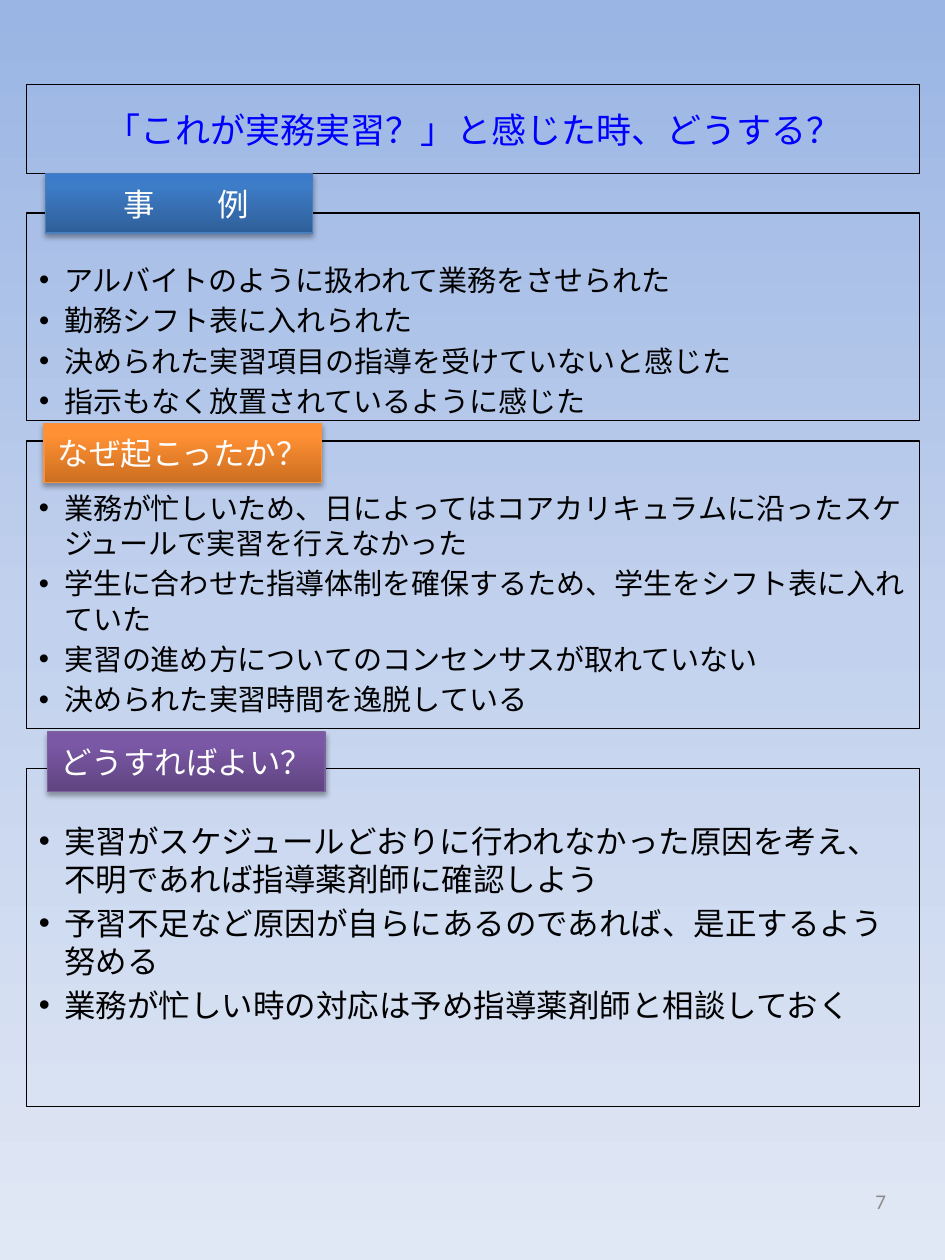
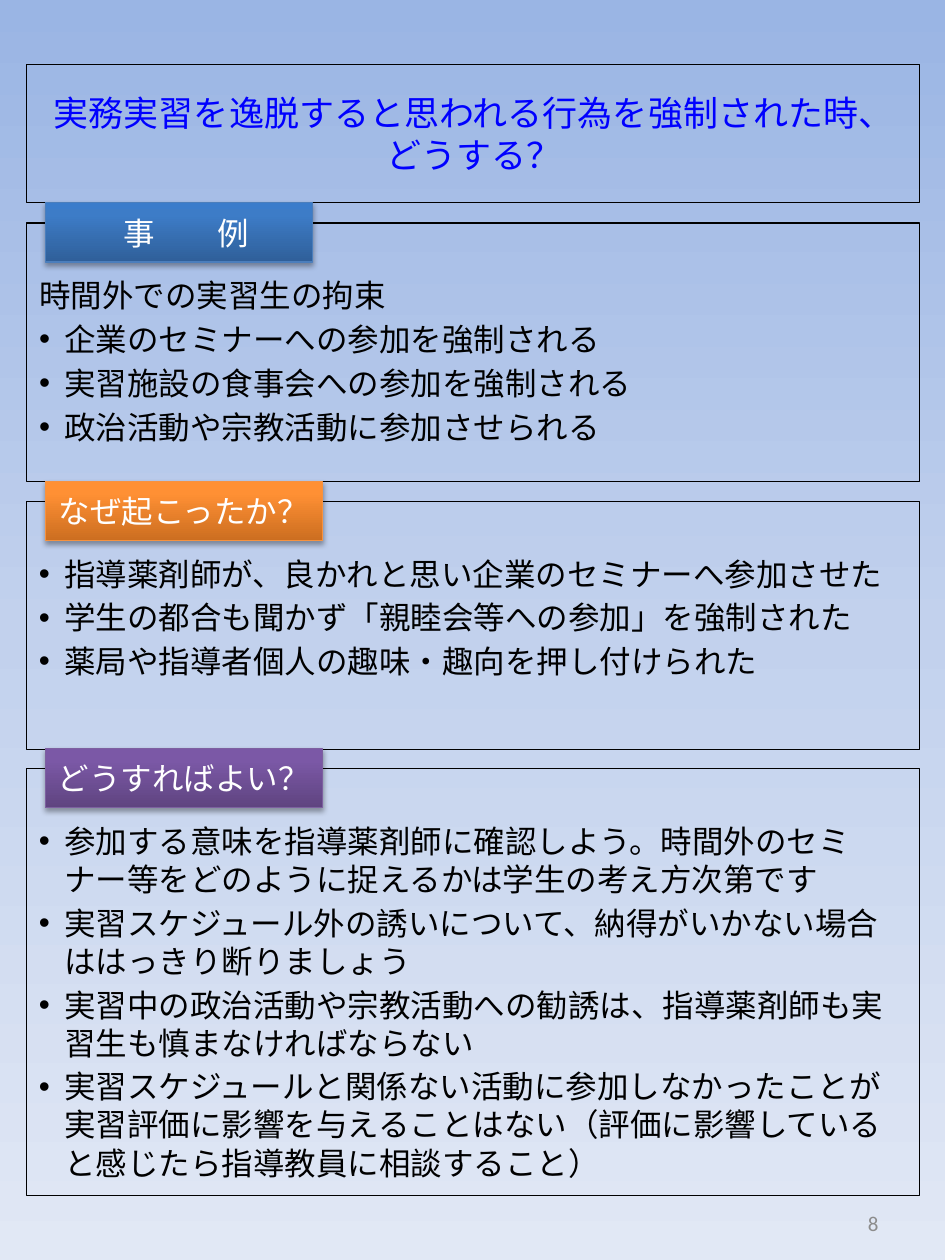
from typing import NamedTuple

from lxml.etree import SubElement
from pptx import Presentation
from pptx.dml.color import RGBColor
from pptx.enum.shapes import MSO_SHAPE
from pptx.enum.text import MSO_ANCHOR, MSO_AUTO_SIZE, PP_ALIGN
from pptx.oxml.ns import qn
from pptx.util import Pt

PX = 9144
JP_FONT = "Noto Sans CJK JP"
LATIN_FONT = "Calibri"
LINE_RATIO = 1.21
GAP_RATIO = 0.18
COLORS = {
    "title": "0000FF",
    "text": "000000",
    "border": "000000",
    "label": "FFFFFF",
    "number": "8C8C8C",
}
BACKGROUND = ((0, "9AB5E4"), (50, "C2D1ED"), (100, "E1E8F5"))


class Box(NamedTuple):
    x: int
    y: int
    w: int
    h: int


class TagKind(NamedTuple):
    text: str
    width: int
    line: str
    stops: tuple[tuple[int, str], ...]
    tracking: int = 0


class Section(NamedTuple):
    kind: TagKind
    tag_x: int
    tag_y: int
    y: int
    h: int
    items: tuple[str, ...]
    size: float = 18
    heading: str = ""


class Page(NamedTuple):
    title: str
    title_y: int
    title_h: int
    sections: tuple[Section, ...]
    number: str
    number_box: Box


CASE = TagKind("事　例", 212, "4B7EBC",
               ((0, "2F5F99"), (80, "3D7CC7"), (100, "3A7CCB")), 9)
CAUSE = TagKind("なぜ起こったか？", 220, "F69240",
                ((0, "CC6E20"), (80, "FF9034"), (100, "FF9136")))
ACTION = TagKind("どうすればよい？", 220, "7D60A0",
                 ((0, "5F4480"), (80, "7B58A6"), (100, "7C57A8")))

PAGES = (
    Page("「これが実務実習？」と感じた時、どうする？", 67, 71, (
        Section(CASE, 36, 138, 169, 165, (
            "アルバイトのように扱われて業務をさせられた",
            "勤務シフト表に入れられた",
            "決められた実習項目の指導を受けていないと感じた",
            "指示もなく放置されているように感じた",
        ), 16.6),
        Section(CAUSE, 35, 336, 350, 228, (
            "業務が忙しいため、日によってはコアカリキュラムに沿ったスケジュールで実習を行えなかった",
            "学生に合わせた指導体制を確保するため、学生をシフト表に入れていた",
            "実習の進め方についてのコンセンサスが取れていない",
            "決められた実習時間を逸脱している",
        ), 16.6),
        Section(ACTION, 38, 581, 610, 268, (
            "実習がスケジュールどおりに行われなかった原因を考え、不明であれば指導薬剤師に確認しよう",
            "予習不足など原因が自らにあるのであれば、是正するよう努める",
            "業務が忙しい時の対応は予め指導薬剤師と相談しておく",
        )),
    ), "7", Box(538, 927, 175, 53)),
    Page("実務実習を逸脱すると思われる行為を強制された時、\vどうする？", 51, 110, (
        Section(CASE, 36, 161, 177, 205, (
            "企業のセミナーへの参加を強制される",
            "実習施設の食事会への参加を強制される",
            "政治活動や宗教活動に参加させられる",
        ), heading="時間外での実習生の拘束"),
        Section(CAUSE, 36, 382, 398, 197, (
            "指導薬剤師が、良かれと思い企業のセミナーへ参加させた",
            "学生の都合も聞かず「親睦会等への参加」を強制された",
            "薬局や指導者個人の趣味・趣向を押し付けられた",
        )),
        Section(ACTION, 36, 594, 610, 339, (
            "参加する意味を指導薬剤師に確認しよう。時間外のセミナー等をどのように捉えるかは学生の考え方次第です",
            "実習スケジュール外の誘いについて、納得がいかない場合ははっきり断りましょう",
            "実習中の政治活動や宗教活動への勧誘は、指導薬剤師も実習生も慎まなければならない",
            "実習スケジュールと関係ない活動に参加しなかったことが実習評価に影響を与えることはない"
            "（評価に影響していると感じたら指導教員に相談すること）",
        )),
    ), "8", Box(532, 944, 175, 53)),
)


def px(value: int) -> int:
    return value * PX


def place(sp, box: Box) -> None:
    sp.left, sp.top, sp.width, sp.height = map(px, box)


def set_gradient(fill, element, stops, angle: int) -> None:
    fill.gradient()
    grad = element.find(".//" + qn("a:gradFill"))
    for child in list(grad):
        grad.remove(child)
    gs_list = SubElement(grad, qn("a:gsLst"))
    for pos, color in stops:
        gs = SubElement(gs_list, qn("a:gs"), pos=str(pos * 1000))
        SubElement(gs, qn("a:srgbClr"), val=color)
    SubElement(grad, qn("a:lin"), ang=str(angle * 60000), scaled="0")


def set_border(sp, color: str) -> None:
    sp.line.color.rgb = RGBColor.from_string(color)
    sp.line.width = Pt(0.75)


def set_frame(sp, anchor, top: int = 5, left: int = 10, right: int = 9) -> None:
    tf = sp.text_frame
    tf.word_wrap = True
    tf.auto_size = MSO_AUTO_SIZE.NONE
    tf.vertical_anchor = anchor
    tf.margin_left, tf.margin_top = px(left), px(top)
    tf.margin_right, tf.margin_bottom = px(right), px(5)


def style_text(sp, size: float, color: str, align, name: str = JP_FONT) -> None:
    for i, p in enumerate(sp.text_frame.paragraphs):
        p.alignment = align
        p.line_spacing = Pt(size * LINE_RATIO)
        p.space_before = Pt(size * GAP_RATIO if i else 0)
        for font in (p.font, *(r.font for r in p.runs)):
            font.size = Pt(size)
            font.name = name
            font.color.rgb = RGBColor.from_string(COLORS[color])
    for props in sp.element.iter(qn("a:rPr"), qn("a:defRPr")):
        SubElement(props, qn("a:ea"), typeface=name)


def set_bullets(sp, has_heading: bool) -> None:
    for i, props in enumerate(sp.element.iter(qn("a:pPr"))):
        props.set("marL", str(px(20)))
        props.set("indent", str(px(-20)))
        if has_heading and i == 0:
            bullets = [SubElement(props, qn("a:buNone"))]
        else:
            bullets = [SubElement(props, qn("a:buFont"), typeface="Arial"),
                       SubElement(props, qn("a:buChar"), char="•")]
        for bullet in bullets:
            props.find(qn("a:defRPr")).addprevious(bullet)


def draw_title(s, page: Page) -> None:
    sp = s.shapes.title
    place(sp, Box(21, page.title_y, 709, page.title_h))
    set_border(sp, COLORS["border"])
    sp.text_frame.text = page.title
    set_frame(sp, MSO_ANCHOR.MIDDLE)
    style_text(sp, 20, "title", PP_ALIGN.CENTER)


def draw_section(sp, section: Section) -> None:
    place(sp, Box(21, section.y, 709, section.h))
    sp.fill.background()
    set_border(sp, COLORS["border"])
    lines = (section.heading, *section.items) if section.heading else section.items
    sp.text_frame.text = "\n".join(lines)
    set_frame(sp, MSO_ANCHOR.TOP, top=round(5 + section.size * 2.04))
    style_text(sp, section.size, "text", PP_ALIGN.LEFT)
    set_bullets(sp, bool(section.heading))


def add_rectangle(s):
    sp = s.shapes.add_shape(MSO_SHAPE.RECTANGLE, 0, 0, 0, 0)
    sp.shadow.inherit = False
    return sp


def add_tag(s, section: Section) -> None:
    kind = section.kind
    sp = add_rectangle(s)
    place(sp, Box(section.tag_x, section.tag_y, kind.width, 47))
    set_gradient(sp.fill, sp.element, kind.stops, 270)
    set_border(sp, kind.line)
    shadow = SubElement(sp.element.find(".//" + qn("a:effectLst")), qn("a:outerShdw"),
                        blurRad=str(Pt(3.1)), dist=str(Pt(1.8)),
                        dir="5400000", rotWithShape="0")
    tint = SubElement(shadow, qn("a:srgbClr"), val="000000")
    SubElement(tint, qn("a:alpha"), val="35000")
    sp.text_frame.text = kind.text
    set_frame(sp, MSO_ANCHOR.MIDDLE, left=5 + round(kind.tracking * 100 / 72), right=5)
    style_text(sp, 18, "label", PP_ALIGN.CENTER)
    if kind.tracking:
        for props in sp.element.iter(qn("a:rPr")):
            props.set("spc", str(kind.tracking * 100))


def add_number(s, page: Page) -> None:
    sp = s.shapes.add_textbox(0, 0, 0, 0)
    place(sp, page.number_box)
    sp.text_frame.text = page.number
    set_frame(sp, MSO_ANCHOR.MIDDLE, right=10)
    style_text(sp, 12, "number", PP_ALIGN.RIGHT, LATIN_FONT)


def build_page(prs, page: Page) -> None:
    s = prs.slides.add_slide(prs.slide_layouts[1])
    draw_title(s, page)
    first, *others = page.sections
    draw_section(s.placeholders[1], first)
    for section in others:
        draw_section(add_rectangle(s), section)
    for section in page.sections:
        add_tag(s, section)
    add_number(s, page)


def main() -> None:
    prs = Presentation()
    prs.slide_width, prs.slide_height = px(750), px(1000)
    master = prs.slide_master
    set_gradient(master.background.fill, master.element, BACKGROUND, 90)
    for page in PAGES:
        build_page(prs, page)
    prs.save("out.pptx")


if __name__ == "__main__":
    main()
